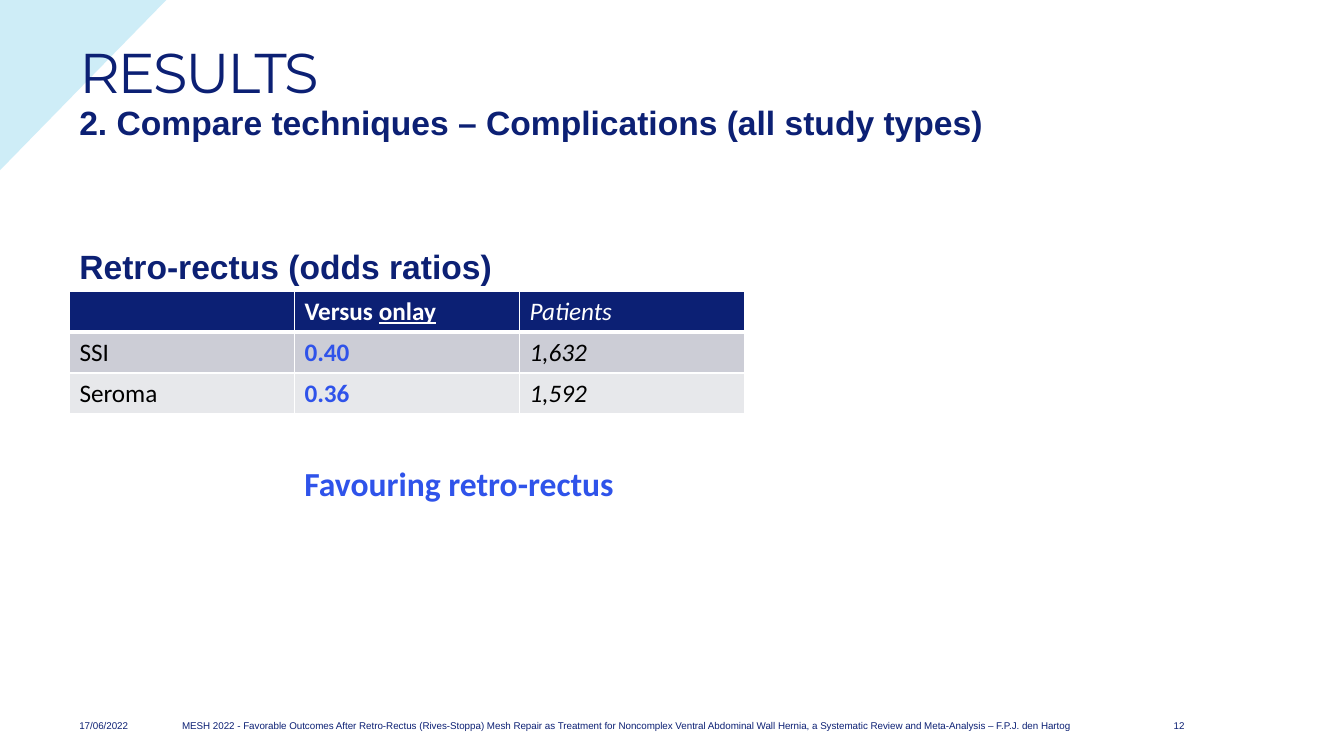
from dataclasses import dataclass

from lxml import etree
from pptx import Presentation
from pptx import util as u
from pptx.dml.color import RGBColor
from pptx.enum import shapes, text
from pptx.oxml import ns

COLORS = {
    "navy": "0C2074",
    "favour": "2F53EA",
    "corner": "86D2ED",
    "white": "FFFFFF",
    "black": "000000",
    "band_dark": "CCCDD6",
    "band_light": "E7E8EB",
}
LEFT = 1.75
WIDE = 28.35
FOOTER_TOP = 18.01
FOOTER_HEIGHT = 0.56


@dataclass(frozen=True)
class Style:
    size: float
    font: str = "Arial"
    color: str = "navy"
    bold: bool = False
    italic: bool = False
    underline: bool = False


@dataclass(frozen=True)
class Label:
    words: str
    left: float
    top: float
    width: float
    height: float
    style: Style
    spacing: float = 1.0
    anchor: text.MSO_ANCHOR = text.MSO_ANCHOR.TOP
    align: text.PP_ALIGN = text.PP_ALIGN.LEFT
    indent: float = 0
    tracking: int = 0


@dataclass(frozen=True)
class Cell:
    phrases: tuple[tuple[str, Style], ...]
    fill: str


HEADING = Style(24, bold=True)
FOOTER = Style(7)
HEAD = Style(18, "Calibri", "white", bold=True)
HEAD_UNDERLINED = Style(18, "Calibri", "white", bold=True, underline=True)
HEAD_ITALIC = Style(18, "Calibri", "white", italic=True)
OUTCOME = Style(18, "Calibri", "black")
RATIO = Style(18, "Calibri", "favour", bold=True)
PATIENTS = Style(18, "Calibri", "black", italic=True)

LABELS = [
    Label("2. Compare techniques – Complications (all study types)",
          LEFT, 2.57, WIDE, 1.57, HEADING, spacing=0.9),
    Label("RESULTS", LEFT, 1.02, WIDE, 1.8, Style(40, "Montserrat"),
          spacing=0.9, tracking=-150),
    Label("17/06/2022", LEFT, FOOTER_TOP, 2.31, FOOTER_HEIGHT, FOOTER),
    Label("MESH 2022 - Favorable Outcomes After Retro-Rectus (Rives-Stoppa) Mesh Repair "
          "as Treatment for Noncomplex Ventral Abdominal Wall Hernia, a Systematic Review "
          "and Meta-Analysis – F.P.J. den Hartog",
          4.34, FOOTER_TOP, 24.16, FOOTER_HEIGHT, FOOTER),
    Label("12", 28.75, FOOTER_TOP, 1.35, FOOTER_HEIGHT, FOOTER, align=text.PP_ALIGN.RIGHT),
    Label("Retro-rectus (odds ratios)", LEFT, 5.05, 13.97, 2.29, HEADING,
          spacing=0.9, anchor=text.MSO_ANCHOR.BOTTOM),
    Label("Favouring retro-rectus", LEFT, 11.53, WIDE, 5.38,
          Style(24, "Calibri", "favour", bold=True), indent=5.67),
]

RESULTS = [("SSI", "0.40", "1,632"), ("Seroma", "0.36", "1,592")]


def rgb(name: str) -> RGBColor:
    return RGBColor.from_string(COLORS[name])


def format_run(run, style: Style) -> None:
    run.font.size = u.Pt(style.size)
    run.font.name = style.font
    run.font.color.rgb = rgb(style.color)
    run.font.bold = style.bold
    run.font.italic = style.italic
    run.font.underline = style.underline


def draw_corner(slide) -> None:
    corner = slide.shapes.add_shape(
        shapes.MSO_SHAPE.RIGHT_TRIANGLE, u.Cm(-0.05), u.Cm(0), u.Cm(4.34), u.Cm(4.24))
    corner.rotation = 90
    corner.shadow.inherit = False
    corner.line.fill.background()
    corner.fill.solid()
    corner.fill.fore_color.rgb = rgb("corner")
    tint = corner._element.spPr.find(".//" + ns.qn("a:srgbClr"))
    etree.SubElement(tint, ns.qn("a:alpha"), val="40000")


def draw_label(slide, label: Label) -> None:
    box = slide.shapes.add_textbox(
        u.Cm(label.left), u.Cm(label.top), u.Cm(label.width), u.Cm(label.height))
    frame = box.text_frame
    frame.word_wrap = True
    frame.vertical_anchor = label.anchor
    frame.text = label.words
    line = frame.paragraphs[0]
    line.alignment = label.align
    line.line_spacing = label.spacing
    if label.indent:
        line._p.get_or_add_pPr().set("marL", str(u.Cm(label.indent)))
    format_run(line.runs[0], label.style)
    if label.tracking:
        line.runs[0]._r.get_or_add_rPr().set("spc", str(label.tracking))


def draw_borders(cell, is_header: bool, follows_header: bool) -> None:
    heavy = {"lnB": is_header, "lnT": follows_header}
    properties = cell._tc.get_or_add_tcPr()
    for side in ("lnL", "lnR", "lnT", "lnB"):
        width = u.Pt(3 if heavy.get(side) else 1)
        border = etree.SubElement(properties, ns.qn(f"a:{side}"), w=str(width))
        paint = etree.SubElement(border, ns.qn("a:solidFill"))
        etree.SubElement(paint, ns.qn("a:srgbClr"), val=COLORS["white"])


def draw_table(slide) -> None:
    rows = [[
        Cell((), "navy"),
        Cell((("Versus ", HEAD), ("onlay", HEAD_UNDERLINED)), "navy"),
        Cell((("Patients", HEAD_ITALIC),), "navy"),
    ]]
    for values, band in zip(RESULTS, ("band_dark", "band_light")):
        styles = (OUTCOME, RATIO, PATIENTS)
        rows.append([Cell((phrase,), band) for phrase in zip(values, styles)])

    odds = slide.shapes.add_table(
        len(rows), len(rows[0]), u.Cm(LEFT), u.Cm(7.34), u.Cm(17.01), u.Cm(3.09)).table
    for row_index, row in enumerate(rows):
        for column_index, content in enumerate(row):
            cell = odds.cell(row_index, column_index)
            draw_borders(cell, row_index == 0, row_index == 1)
            cell.fill.solid()
            cell.fill.fore_color.rgb = rgb(content.fill)
            for words, style in content.phrases:
                run = cell.text_frame.paragraphs[0].add_run()
                run.text = words
                format_run(run, style)


def main() -> None:
    deck = Presentation()
    deck.slide_width = u.Cm(33.87)
    deck.slide_height = u.Cm(19.05)
    slide = deck.slides.add_slide(deck.slide_layouts[6])
    draw_corner(slide)
    draw_table(slide)
    for label in LABELS:
        draw_label(slide, label)
    deck.save("out.pptx")


if __name__ == "__main__":
    main()
